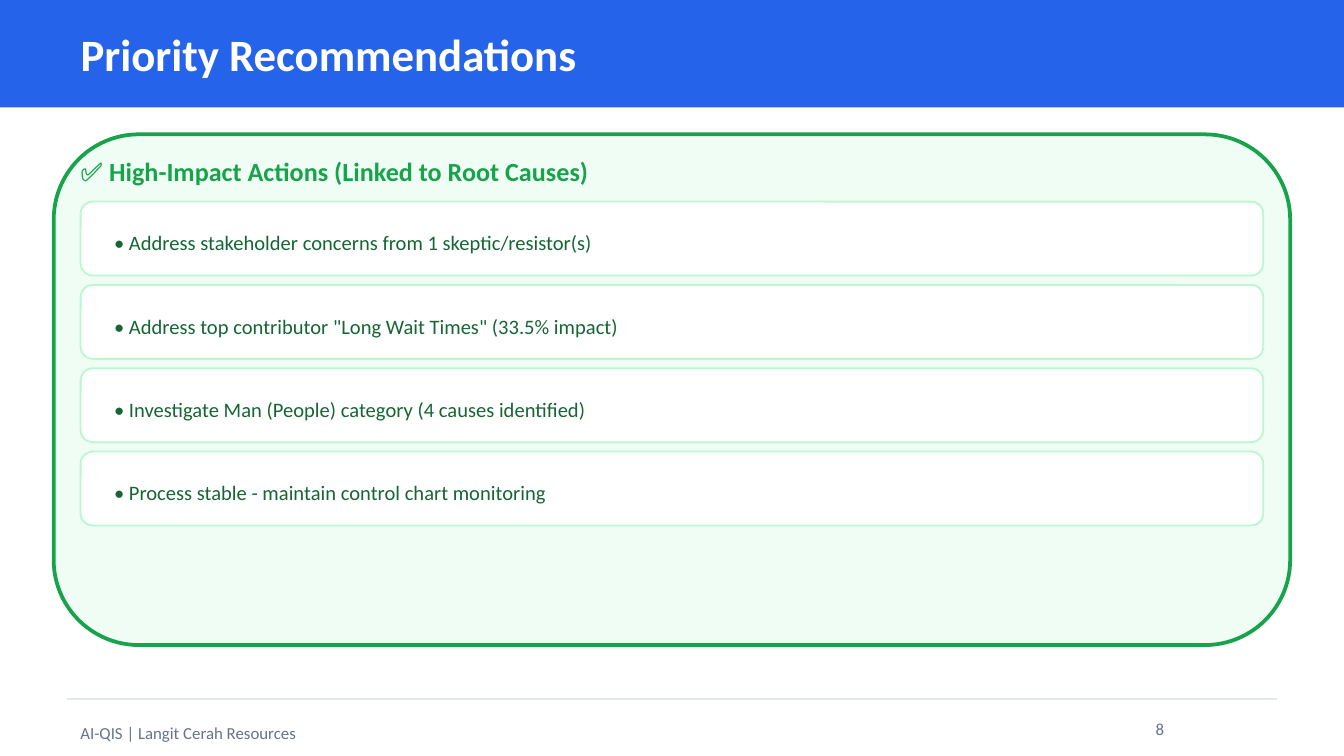
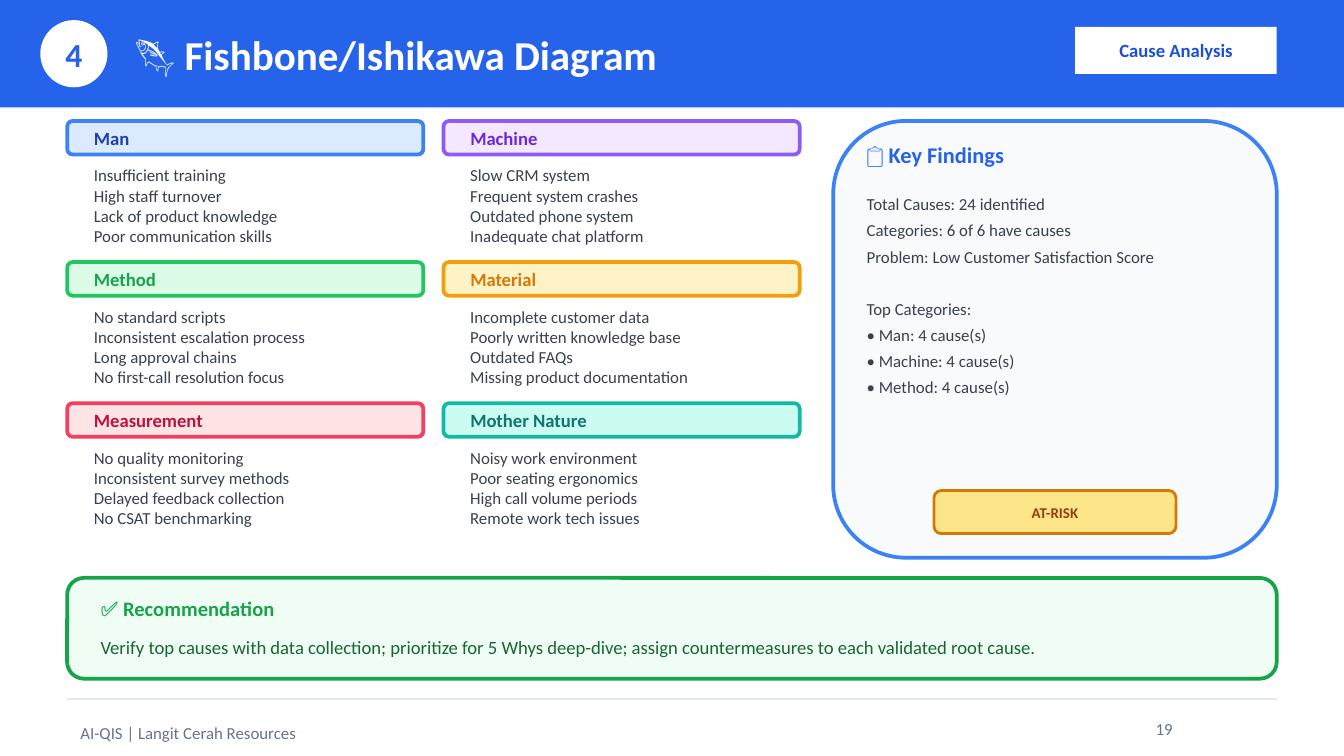
"""Builds the two report slides: recommendations and fishbone analysis."""
from lxml.etree import SubElement
from pptx import Presentation
from pptx.dml.color import RGBColor
from pptx.enum.shapes import MSO_CONNECTOR as Link, MSO_SHAPE as Form
from pptx.enum.text import MSO_ANCHOR as Anchor, MSO_AUTO_SIZE as Fit, PP_ALIGN as Align
from pptx.oxml.ns import qn
from pptx.util import Pt

FONT = "Calibri"
FOOTER = "AI-QIS | Langit Cerah Resources"
COLORS = {
    "white": "FFFFFF", "brand": "2563EB", "royal": "1D4ED8", "rule": "E2E8F0",
    "slate": "64748B", "ink": "374151", "paper": "F8FAFC",
    "mint": "F0FDF4", "leaf": "16A34A", "lime": "BBF7D0", "forest": "166534",
    "sky": "DBEAFE", "blue": "3B82F6", "navy": "1E40AF",
    "lilac": "F3E8FF", "violet": "8B5CF6", "purple": "6D28D9",
    "pale": "DCFCE7", "green": "22C55E",
    "cream": "FEF3C7", "amber": "F59E0B", "orange": "D97706",
    "blush": "FFE4E6", "rose": "F43F5E", "crimson": "BE123C",
    "foam": "CCFBF1", "teal": "14B8A6", "pine": "0F766E",
    "butter": "FDE68A", "brown": "92400E",
}
ACTIONS = [
    "• Address stakeholder concerns from 1 skeptic/resistor(s)",
    "• Address top contributor \"Long Wait Times\" (33.5% impact)",
    "• Investigate Man (People) category (4 causes identified)",
    "• Process stable - maintain control chart monitoring",
]
CAUSES = [
    ("Man", "sky", "blue", "navy",
     ["Insufficient training", "High staff turnover",
      "Lack of product knowledge", "Poor communication skills"]),
    ("Machine", "lilac", "violet", "purple",
     ["Slow CRM system", "Frequent system crashes",
      "Outdated phone system", "Inadequate chat platform"]),
    ("Method", "pale", "green", "leaf",
     ["No standard scripts", "Inconsistent escalation process",
      "Long approval chains", "No first-call resolution focus"]),
    ("Material", "cream", "amber", "orange",
     ["Incomplete customer data", "Poorly written knowledge base",
      "Outdated FAQs", "Missing product documentation"]),
    ("Measurement", "blush", "rose", "crimson",
     ["No quality monitoring", "Inconsistent survey methods",
      "Delayed feedback collection", "No CSAT benchmarking"]),
    ("Mother Nature", "foam", "teal", "pine",
     ["Noisy work environment", "Poor seating ergonomics",
      "High call volume periods", "Remote work tech issues"]),
]
FACTS = [
    "Total Causes: 24 identified",
    "Categories: 6 of 6 have causes",
    "Problem: Low Customer Satisfaction Score",
]
TOP = ["Top Categories:", "• Man: 4 cause(s)", "• Machine: 4 cause(s)",
       "• Method: 4 cause(s)"]


def color(name):
    """Return the named colour."""
    return RGBColor.from_string(COLORS[name])


class Deck:
    """Holds the style and the current slide."""

    def __init__(self):
        """Start an empty wide deck."""
        self.file = Presentation()
        self.file.slide_width, self.file.slide_height = Pt(720), Pt(405)
        self.slide = None

    def start(self, title, page, left=36, width=648, size=24):
        """Add a slide with band, footer and title."""
        self.slide = self.file.slides.add_slide(self.file.slide_layouts[5])
        self.box(0, 0, 720, 57.6, "brand", form=Form.RECTANGLE)
        self.rule(36, 374.4, 684)
        self.text(FOOTER, 36, 381.6, 360, 21.6, 9, "slate")
        self.text(page, 612, 381.6, 72, 21.6, 9, "slate", anchor=Anchor.TOP)
        head = self.slide.shapes.title
        self.slide.shapes.element.append(head.element)
        head.left, head.top = Pt(left), Pt(10.8)
        head.width, head.height = Pt(width), Pt(36)
        self.style(head.text_frame, title, size, "white", bold=True)

    def style(self, frame, lines, size, tint, bold=False, align=Align.LEFT,
              anchor=Anchor.MIDDLE, pitch=None):
        """Fill and format a text frame, one paragraph a line."""
        frame.text = lines if isinstance(lines, str) else "\n".join(lines)
        frame.word_wrap, frame.auto_size = True, Fit.NONE
        frame.vertical_anchor = anchor
        for para in frame.paragraphs:
            para.alignment = align
            if pitch:
                para.line_spacing = Pt(pitch)
            font = para.font
            font.name, font.size, font.bold = FONT, Pt(size), bold
            font.color.rgb = color(tint)

    def text(self, lines, left, top, width, height, size, tint, **look):
        """Add a text box and return its frame."""
        box = self.slide.shapes.add_textbox(Pt(left), Pt(top), Pt(width), Pt(height))
        self.style(box.text_frame, lines, size, tint, **look)
        return box.text_frame

    def box(self, left, top, width, height, fill, line=None, weight=2,
            form=Form.ROUNDED_RECTANGLE):
        """Add a filled shape and return its frame."""
        shape = self.slide.shapes.add_shape(
            form, Pt(left), Pt(top), Pt(width), Pt(height))
        shape.shadow.inherit = False
        shape.fill.solid()
        shape.fill.fore_color.rgb = color(fill)
        if line:
            shape.line.color.rgb = color(line)
            shape.line.width = Pt(weight)
        else:
            shape.line.fill.background()
        return shape.text_frame

    def label(self, frame, words, size, tint, left=0, top=0, **look):
        """Put words inside a shape with tight margins."""
        frame.margin_left, frame.margin_top = Pt(left), Pt(top)
        frame.margin_right = frame.margin_bottom = 0
        self.style(frame, words, size, tint, **look)

    def rule(self, left, top, right):
        """Add a thin level line."""
        line = self.slide.shapes.add_connector(
            Link.STRAIGHT, Pt(left), Pt(top), Pt(right), Pt(top))
        line.line.color.rgb = color("rule")
        line.line.width = Pt(1)
        SubElement(line.element.spPr, qn("a:effectLst"))

    def cause(self, left, top, name, fill, line, tint, items):
        """Add one fishbone category with its causes."""
        head = self.box(left, top, 190.8, 18, fill, line)
        self.label(head, name, 10, tint, left=13.5, bold=True)
        self.text(items, left + 7.2, top + 20.16, 176.4, 50.4, 9, "ink",
                  anchor=Anchor.TOP)


def advice(deck):
    """Build the recommendations slide."""
    deck.start("Priority Recommendations", "8")
    deck.box(28.8, 72, 662.4, 273.6, "mint", "leaf")
    deck.text("✅ High-Impact Actions (Linked to Root Causes)",
              36, 79.2, 648, 25.2, 14, "leaf", bold=True)
    for row, action in enumerate(ACTIONS):
        card = deck.box(43.2, 108 + 44.64 * row, 633.6, 39.6, "white", "lime", 1)
        deck.label(card, action, 11, "forest", left=16, top=4.3)


def fishbone(deck):
    """Build the cause analysis slide."""
    deck.start("🐟 Fishbone/Ishikawa Diagram", "19", 64.8, 504, 22)
    badge = deck.box(21.6, 10.8, 36, 36, "white", form=Form.OVAL)
    deck.label(badge, "4", 18, "brand", bold=True, align=Align.CENTER)
    tag = deck.box(576, 14.4, 108, 25.2, "white", form=Form.RECTANGLE)
    deck.label(tag, "Cause Analysis", 10, "royal", bold=True, align=Align.CENTER)

    for index, group in enumerate(CAUSES):
        row, col = divmod(index, 2)
        deck.cause(36 + 201.6 * col, 64.8 + 75.6 * row, *group)

    deck.box(446.4, 64.8, 237.6, 234, "paper", "blue")
    deck.text("📋 Key Findings", 457.2, 72, 216, 21.6, 12, "brand", bold=True)
    facts = deck.text(FACTS + TOP, 457.2, 97.2, 216, 147.6, 9, "ink",
                      anchor=Anchor.TOP, pitch=14)
    facts.paragraphs[len(FACTS)].space_before = Pt(14)
    risk = deck.box(500.4, 262.8, 129.6, 23.04, "butter", "orange", 1.5)
    deck.label(risk, "AT-RISK", 8, "brown", bold=True, align=Align.CENTER)

    deck.box(36, 309.6, 648, 54, "mint", "leaf")
    deck.text("✅ Recommendation", 46.8, 315.36, 144, 21.6, 11, "leaf", bold=True)
    deck.text("Verify top causes with data collection; prioritize for 5 Whys "
              "deep-dive; assign countermeasures to each validated root cause.",
              46.8, 336.96, 626.4, 25.2, 10, "forest", anchor=Anchor.TOP)


def main():
    """Build and save the deck."""
    deck = Deck()
    advice(deck)
    fishbone(deck)
    deck.file.save("out.pptx")


if __name__ == "__main__":
    main()
